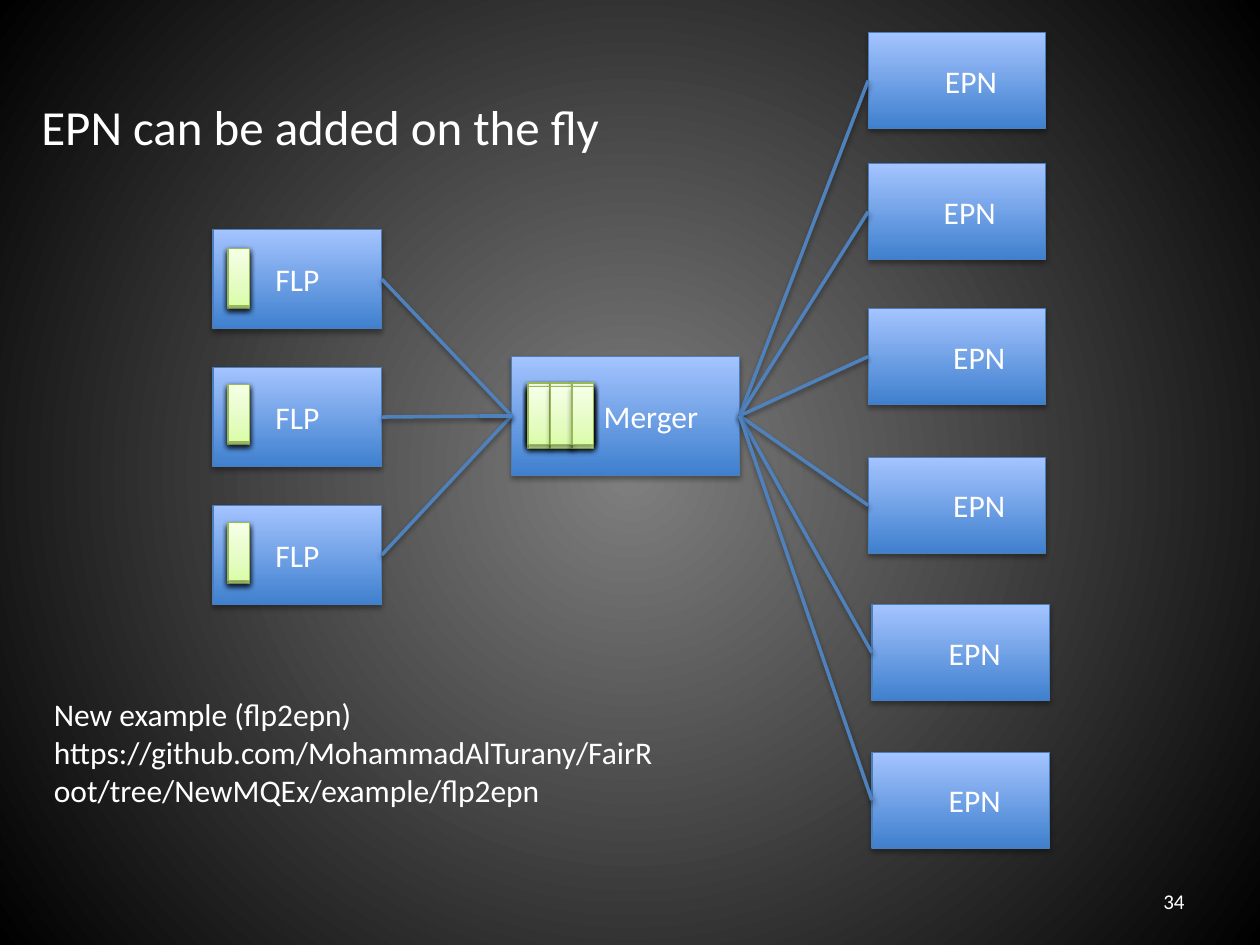
from lxml import etree
from pptx import Presentation
from pptx.dml.color import RGBColor
from pptx.enum.shapes import MSO_CONNECTOR, MSO_SHAPE
from pptx.enum.text import MSO_ANCHOR, PP_ALIGN
from pptx.oxml.ns import qn
from pptx.util import Inches, Pt

RECT, STRAIGHT = MSO_SHAPE.RECTANGLE, MSO_CONNECTOR.STRAIGHT
TOP, MIDDLE = MSO_ANCHOR.TOP, MSO_ANCHOR.MIDDLE
LEFT, CENTER, RIGHT = PP_ALIGN.LEFT, PP_ALIGN.CENTER, PP_ALIGN.RIGHT
LEFT_SIDE, RIGHT_SIDE = 1, 3

WHITE = RGBColor(0xFF, 0xFF, 0xFF)
BLACK = RGBColor(0, 0, 0)
GREY = RGBColor(0x7F, 0x7F, 0x7F)
BLUE_EDGE = RGBColor(0x4B, 0x7E, 0xBC)
BLUE_LINK = RGBColor(0x4F, 0x81, 0xBD)
GREEN_EDGE = RGBColor(0x98, 0xB9, 0x55)
BLUE_STOPS = [(0, RGBColor(0x3F, 0x80, 0xCE)), (100, RGBColor(0xA4, 0xC4, 0xFF))]
GREEN_STOPS = [(0, RGBColor(0xDA, 0xFD, 0xA7)), (35, RGBColor(0xE4, 0xFC, 0xC2)),
               (100, RGBColor(0xF5, 0xFF, 0xE7))]

# The slide is a grid of 100 columns by 75 rows
COLS, ROWS = 100, 75
FONT = "Calibri"
FLP_TOP, FLP_STEP, FLP_COUNT = 18.2, 10.95, 3
FLP_CHIP_ROWS = (19.9, 30.7, 41.7)
FLP_CHIP_SHIFTS = (0, -0.2, 0, -0.2)
MERGER_CHIP_COLS = (41.9, 43.7, 45.4)
MERGER_CHIP_ROWS = (30.7, 30.4, 30.7, 30.4, 30.8, 30.5, 30.8, 30.4, 31, 30.7)
# Column, row and label shift of each EPN
EPNS = [(68.9, 2.6, 2.2), (68.9, 13, 2), (68.9, 24.5, 3.5),
        (68.9, 36.3, 3.5), (69.2, 48, 2.2), (69.2, 59.7, 2.2)]


def grid(*units):
    return [Inches(u / 10) for u in units]


def child(parent, tag, **attrs):
    el = etree.SubElement(parent, qn(tag))
    for name, value in attrs.items():
        el.set(name, str(value))
    return el


def set_gradient(parent, stops, circle=False):
    """Put a gradient in place of the solid fill in parent."""
    solid = parent.find(qn("a:solidFill"))
    grad = etree.Element(qn("a:gradFill"), rotWithShape="1")
    gs_list = child(grad, "a:gsLst")
    for pos, color in stops:
        child(child(gs_list, "a:gs", pos=pos * 1000), "a:srgbClr", val=color)
    if circle:
        way = child(grad, "a:path", path="circle")
        child(way, "a:fillToRect", l=50000, t=50000, r=50000, b=50000)
    else:
        child(grad, "a:lin", ang=270 * 60000, scaled=0)
    parent.replace(solid, grad)


def add_shadow(sp_pr, alpha, dist):
    effects = sp_pr.find(qn("a:effectLst"))
    if effects is None:
        effects = child(sp_pr, "a:effectLst")
    shadow = child(effects, "a:outerShdw", blurRad=Pt(3.1), dist=Pt(dist),
                   dir=90 * 60000, rotWithShape=0)
    child(child(shadow, "a:srgbClr", val=BLACK), "a:alpha", val=alpha * 1000)


def add_text(p, text, size):
    r = p.add_run()
    r.text = text
    r.font.name, r.font.size = FONT, Pt(size)
    r.font.color.rgb = WHITE


def add_rect(shapes, at, stops, edge, alpha, dist):
    sp = shapes.add_shape(RECT, *grid(*at))
    sp.fill.solid()
    set_gradient(sp.element.spPr, stops)
    sp.line.color.rgb, sp.line.width = edge, Pt(0.75)
    sp.shadow.inherit = False
    add_shadow(sp.element.spPr, alpha, dist)
    return sp


def add_node(s, at, label, shift=0):
    """A blue box; shift moves its label away from the left side."""
    sp = add_rect(s.shapes, at, BLUE_STOPS, BLUE_EDGE, 35, 1.8)
    tf = sp.text_frame
    tf.vertical_anchor = MIDDLE
    tf.margin_left = Inches(0.1 + shift / 10)
    p = tf.paragraphs[0]
    p.alignment = CENTER
    add_text(p, label, 18)
    return sp


def add_chip(shapes, col, row):
    add_rect(shapes, (col, row, 1.7, 4.6), GREEN_STOPS, GREEN_EDGE, 38, 1.6)


def add_line(s, *ends):
    line = s.shapes.add_connector(STRAIGHT, *grid(*ends))
    line.line.color.rgb, line.line.width = BLUE_LINK, Pt(2)
    add_shadow(line.element.spPr, 38, 1.6)
    return line


def link(s, source, target):
    line = add_line(s, 0, 0, 0, 0)
    line.begin_connect(source, RIGHT_SIDE)
    line.end_connect(target, LEFT_SIDE)


def add_label(s, at, lines, size, align=LEFT, anchor=TOP, wrap=True):
    tf = s.shapes.add_textbox(*grid(*at)).text_frame
    tf.word_wrap, tf.vertical_anchor = wrap, anchor
    p = tf.paragraphs[0]
    p.alignment = align
    for i, text in enumerate(lines):
        if i:
            p.add_line_break()
        add_text(p, text, size)


def main():
    prs = Presentation()
    prs.slide_width, prs.slide_height = grid(COLS, ROWS)
    s = prs.slides.add_slide(prs.slide_layouts[6])

    # Background
    s.background.fill.solid()
    set_gradient(s.element.find(".//" + qn("p:bgPr")),
                 [(0, GREY), (100, BLACK)], circle=True)

    # Nodes
    flps = [add_node(s, (16.9, FLP_TOP + i * FLP_STEP, 13.4, 7.9), "FLP")
            for i in range(FLP_COUNT)]
    merger = add_node(s, (40.6, 28.3, 18.1, 9.4), "Merger", 4)
    epns = [add_node(s, (col, row, 14.1, 7.6), "EPN", shift)
            for col, row, shift in EPNS]

    # Links
    for flp in flps:
        link(s, flp, merger)
    add_line(s, 38.1, 33, 40.6, 33)
    for epn in epns:
        link(s, merger, epn)

    # Data chips in the FLPs and gathered in the merger
    for shift in FLP_CHIP_SHIFTS:
        for row in FLP_CHIP_ROWS:
            add_chip(s.shapes, 18.1, row + shift)
    for row in MERGER_CHIP_ROWS:
        group = s.shapes.add_group_shape()
        for col in MERGER_CHIP_COLS:
            add_chip(group.shapes, col, row)

    # Texts
    add_label(s, (2.3, 7.2, 46.9, 5.7), ["EPN can be added on the fly"], 28, wrap=False)
    add_label(s, (3.3, 54.7, 50, 10.1),
              ["New example (flp2epn)",
               "https://github.com/MohammadAlTurany/FairRoot/tree/NewMQEx/example/flp2epn"], 18)
    add_label(s, (71.7, 69.5, 23.3, 4), ["34"], 12, RIGHT, MIDDLE)

    prs.save("out.pptx")


if __name__ == "__main__":
    main()
